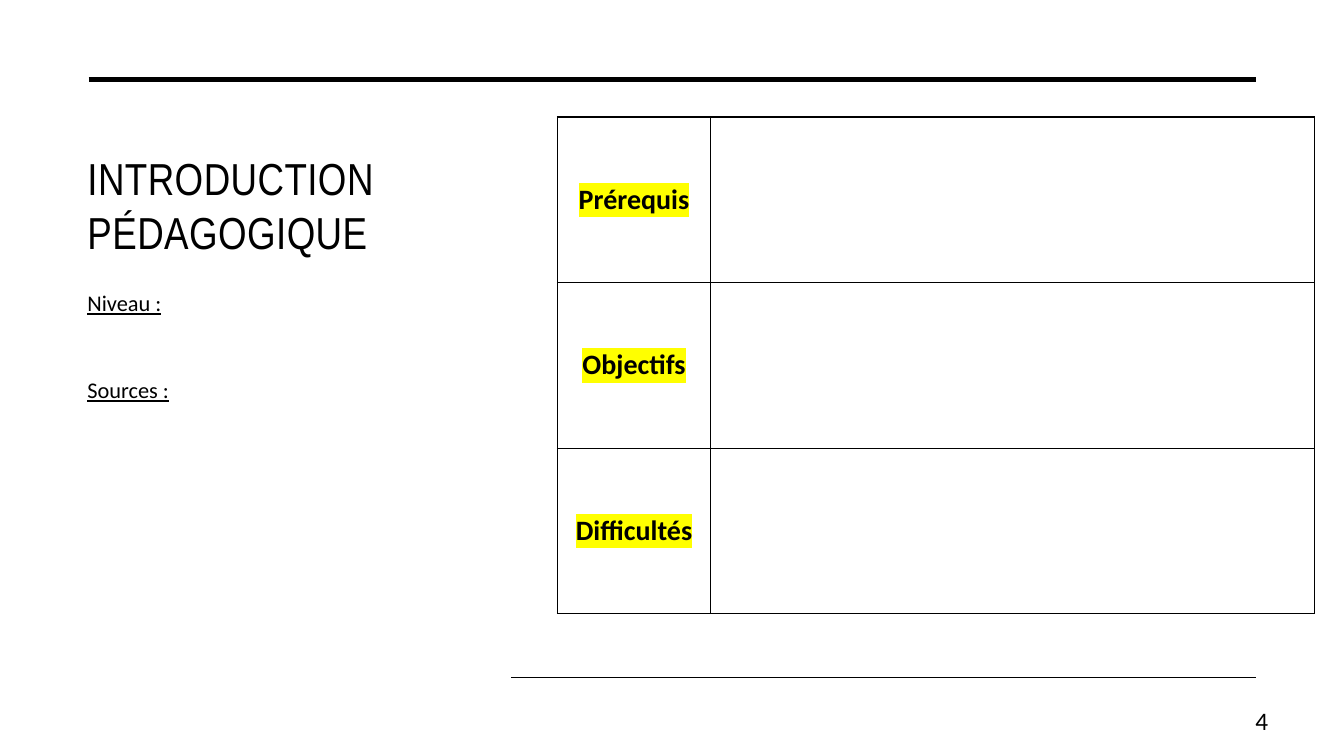
from dataclasses import dataclass
from typing import Optional

from lxml.etree import SubElement as Sub
from pptx import Presentation
from pptx.dml.color import RGBColor as RGB
from pptx.enum.shapes import MSO_CONNECTOR as Conn, MSO_SHAPE as Kind
from pptx.enum.text import MSO_ANCHOR as Anchor, PP_ALIGN as Align
from pptx.oxml.ns import qn
from pptx.util import Pt


@dataclass(frozen=True)
class Theme:
    ink: str = "000000"
    paper: str = "FFFFFF"
    mark: str = "FFFF00"
    head: str = "Arial Narrow"
    body: str = "Calibri"
    title: float = 32
    label: float = 20
    page: float = 18
    note: float = 16


@dataclass(frozen=True)
class Rule:
    top: float
    width: float


@dataclass(frozen=True)
class Box:
    left: float
    top: float
    width: float
    height: float
    lines: tuple[str, ...]
    size: float
    font: str
    align: Align = Align.LEFT
    anchor: Anchor = Anchor.TOP
    fill: Optional[str] = None
    under: bool = False
    space: Optional[float] = None
    gap: float = 0
    track: int = 0


THEME = Theme()
LEFT, RIGHT = 63.4, 897.1
RULES = (Rule(56.9, 3.5), Rule(483.8, 1))
LABELS = ("Prérequis", "Objectifs", "Difficultés")
COLS = (109.4, 431.3)
ROW = 118.3
TITLE = Box(55.4, 84.2, 322.6, 103.7, ("INTRODUCTION PÉDAGOGIQUE",),
            THEME.title, THEME.head, anchor=Anchor.BOTTOM, track=30)
PAGE = Box(859.7, 500.4, 53.3, 28.8, ("4",), THEME.page, THEME.body,
           align=Align.RIGHT, anchor=Anchor.MIDDLE)
NOTES = Box(55.4, 200.9, 309.6, 339.1, ("Niveau :", "Sources :"),
            THEME.note, THEME.body, fill=THEME.paper, under=True,
            space=1.1, gap=41.5)


def style(para, size: float, font: str) -> None:
    para.font.size = Pt(size)
    para.font.name = font
    para.font.color.rgb = RGB.from_string(THEME.ink)


def draw_rule(slide, rule: Rule) -> None:
    line = slide.shapes.add_connector(
        Conn.STRAIGHT, Pt(LEFT), Pt(rule.top), Pt(RIGHT), Pt(rule.top))
    line.line.width = Pt(rule.width)
    line.line.color.rgb = RGB.from_string(THEME.ink)
    Sub(line._element.spPr, qn("a:effectLst"))


def draw_box(slide, box: Box) -> None:
    place = [Pt(n) for n in (box.left, box.top, box.width, box.height)]
    if box.fill:
        shape = slide.shapes.add_shape(Kind.RECTANGLE, *place)
        shape.shadow.inherit = False
        shape.fill.solid()
        shape.fill.fore_color.rgb = RGB.from_string(box.fill)
        shape.line.fill.background()
    else:
        shape = slide.shapes.add_textbox(*place)
    frame = shape.text_frame
    frame.word_wrap = True
    frame.vertical_anchor = box.anchor
    for i, text in enumerate(box.lines):
        para = frame.add_paragraph() if i else frame.paragraphs[0]
        run = para.add_run()
        run.text = text
        para.alignment = box.align
        if box.space:
            para.line_spacing = box.space
        if i:
            para.space_before = Pt(box.gap)
        style(para, box.size, box.font)
        if box.under:
            para.font.underline = True
        if box.track:
            run._r.get_or_add_rPr().set("spc", str(box.track))


def frame_cell(cell) -> None:
    props = cell._tc.get_or_add_tcPr()
    for side in ("lnL", "lnR", "lnT", "lnB"):
        edge = Sub(props, qn(f"a:{side}"), w=str(Pt(1)))
        fill = Sub(edge, qn("a:solidFill"))
        Sub(fill, qn("a:srgbClr"), val=THEME.ink)
    cell.fill.background()


def draw_table(slide) -> None:
    count = len(LABELS)
    table = slide.shapes.add_table(
        count, len(COLS), Pt(398.2), Pt(83.5),
        Pt(sum(COLS)), Pt(ROW * count)).table
    table.first_row = table.horz_banding = False
    for col, width in zip(table.columns, COLS):
        col.width = Pt(width)
    for row, text in zip(table.rows, LABELS):
        row.height = Pt(ROW)
        for cell in row.cells:
            frame_cell(cell)
        cell = row.cells[0]
        cell.vertical_anchor = Anchor.MIDDLE
        para = cell.text_frame.paragraphs[0]
        run = para.add_run()
        run.text = text
        para.alignment = Align.CENTER
        style(para, THEME.label, THEME.body)
        para.font.bold = True
        light = Sub(run._r.get_or_add_rPr(), qn("a:highlight"))
        Sub(light, qn("a:srgbClr"), val=THEME.mark)


def main() -> None:
    deck = Presentation()
    deck.slide_width, deck.slide_height = Pt(960), Pt(540)
    slide = deck.slides.add_slide(deck.slide_layouts[6])
    for rule in RULES:
        draw_rule(slide, rule)
    draw_table(slide)
    for box in (TITLE, PAGE, NOTES):
        draw_box(slide, box)
    deck.save("out.pptx")


if __name__ == "__main__":
    main()
